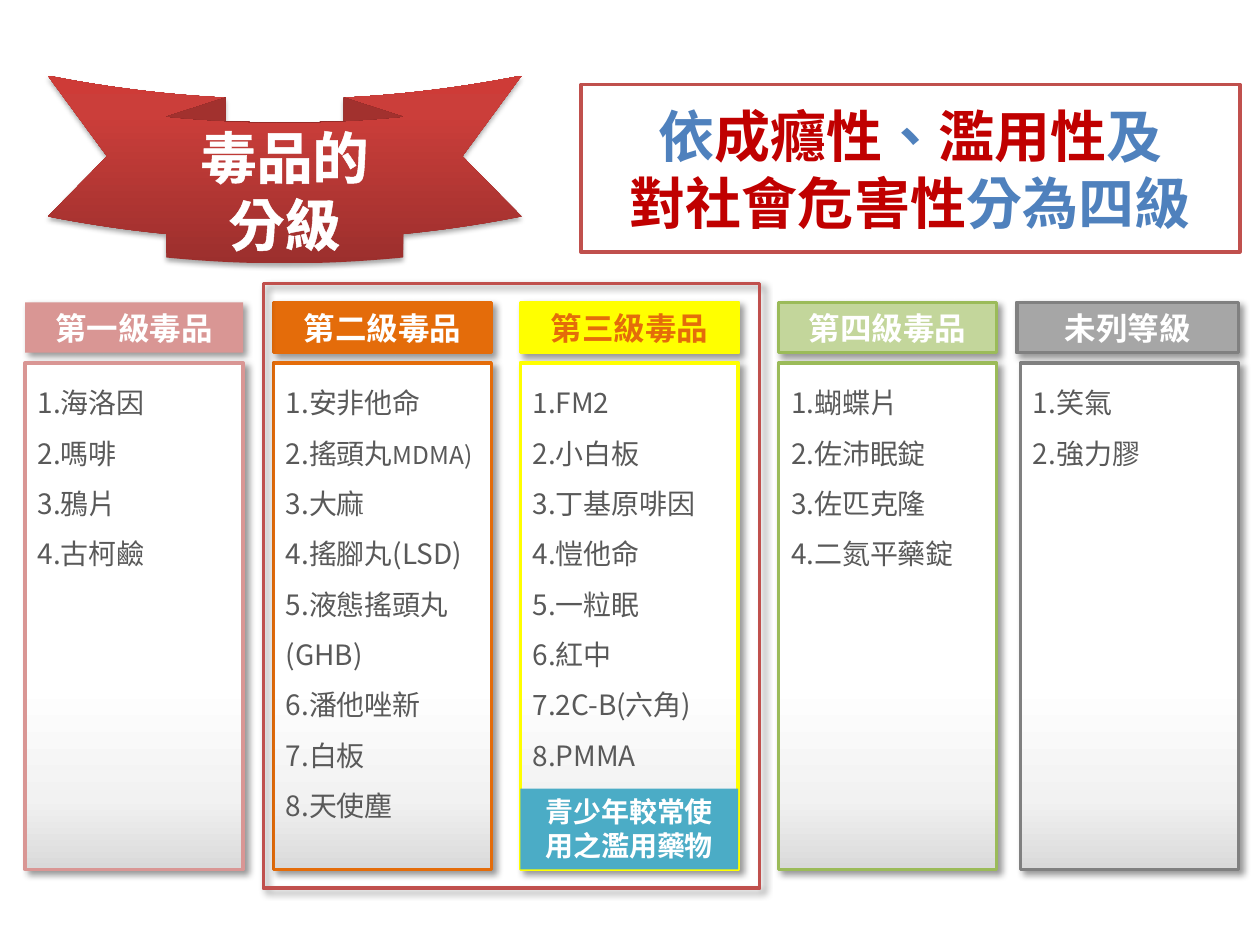
from lxml.etree import SubElement
from pptx import Presentation
from pptx.dml.color import RGBColor
from pptx.enum.shapes import MSO_SHAPE
from pptx.enum.text import MSO_ANCHOR, PP_ALIGN
from pptx.oxml.ns import qn
from pptx.util import Inches, Pt

WHITE = RGBColor(0xFF, 0xFF, 0xFF)
RED = RGBColor(0xC0, 0x50, 0x4D)
DARK_RED = RGBColor(0xC0, 0x00, 0x00)
BLUE = RGBColor(0x4F, 0x81, 0xBD)
TEAL = RGBColor(0x4B, 0xAC, 0xC6)
PINK = RGBColor(0xD9, 0x96, 0x94)
ORANGE = RGBColor(0xE4, 0x6C, 0x0A)
YELLOW = RGBColor(0xFF, 0xFF, 0x00)
GREEN = RGBColor(0x9B, 0xBB, 0x59)
LIGHT_GREEN = RGBColor(0xC3, 0xD6, 0x9B)
GRAY = RGBColor(0x80, 0x80, 0x80)
LIGHT_GRAY = RGBColor(0xA6, 0xA6, 0xA6)
TEXT_GRAY = RGBColor(0x59, 0x59, 0x59)
LIST_STOPS = [
    (63, WHITE),
    (86, RGBColor(0xF2, 0xF2, 0xF2)),
    (100, RGBColor(0xD9, 0xD9, 0xD9)),
]
RIBBON_STOPS = [
    (0, RGBColor(0x9C, 0x2F, 0x2D)),
    (80, RGBColor(0xCB, 0x3E, 0x3A)),
    (100, RGBColor(0xCE, 0x3B, 0x37)),
]
CJK_FONT = "Noto Sans CJK SC"


def add_box(kind, left, top, width, height, fill=None, line=None, shadow=None):
    box = page.shapes.add_shape(
        kind, Inches(left), Inches(top), Inches(width), Inches(height)
    )
    box.shadow.inherit = False
    if fill is None:
        box.fill.background()
    elif isinstance(fill, list):
        box.fill.gradient()
        stops = box.element.spPr.find(".//" + qn("a:gsLst"))
        stops.clear()
        for position, color in fill:
            stop = SubElement(stops, qn("a:gs"), pos=str(position * 1000))
            SubElement(stop, qn("a:srgbClr"), val=str(color))
    else:
        box.fill.solid()
        box.fill.fore_color.rgb = fill
    if line is None:
        box.line.fill.background()
    else:
        box.line.color.rgb = line
        box.line.width = Pt(2)
    if shadow:
        opacity, blur, distance, angle = shadow
        effects = box.element.spPr.find(qn("a:effectLst"))
        outer = SubElement(
            effects, qn("a:outerShdw"), blurRad=str(Pt(blur)), dist=str(Pt(distance)),
            dir=str(angle * 60000), algn="tl", rotWithShape="0",
        )
        color = SubElement(outer, qn("a:srgbClr"), val="000000")
        SubElement(color, qn("a:alpha"), val=str(opacity * 1000))
    return box


def write_text(box, text, size, color, font, bold, align, anchor, spacing=None):
    frame = box.text_frame
    frame.text = text
    frame.word_wrap = True
    frame.vertical_anchor = anchor
    for paragraph in frame.paragraphs:
        paragraph.alignment = align
        paragraph.line_spacing = spacing
        for span in paragraph.runs:
            span.font.name = font
            span.font.size = Pt(size)
            span.font.bold = bold
            span.font.color.rgb = color


deck = Presentation()
deck.slide_width = Inches(10)
deck.slide_height = Inches(7.5)
page = deck.slides.add_slide(deck.slide_layouts[5])

title = page.shapes.title
title.left, title.top = Inches(4.61), Inches(0.67)
title.width, title.height = Inches(5.23), Inches(1.33)
title.fill.solid()
title.fill.fore_color.rgb = WHITE
title.line.color.rgb = RED
title.line.width = Pt(2)
title.text_frame.vertical_anchor = MSO_ANCHOR.MIDDLE
heading = title.text_frame.paragraphs[0]
heading.alignment = PP_ALIGN.CENTER
for text, color in [
    ("依", BLUE), ("成癮性", DARK_RED), ("、", BLUE), ("濫用性", DARK_RED),
    ("及", BLUE), ("對社會危害性", DARK_RED), ("分為四級", BLUE),
]:
    span = heading.add_run()
    span.text = text
    span.font.name = "Calibri"
    span.font.size = Pt(32)
    span.font.bold = True
    span.font.color.rgb = color
    if text == "及":
        heading.add_line_break()

SOFT_SHADOW = (40, 4, 3, 45)
COLUMN_WIDTH = 1.73
columns = [
    (0.2, 0.2, "第一級毒品", PINK, None, PINK, WHITE,
     ["海洛因", "嗎啡", "鴉片", "古柯鹼"]),
    (2.17, 2.17, "第二級毒品", ORANGE, ORANGE, ORANGE, WHITE,
     ["安非他命", "搖頭丸MDMA)", "大麻", "搖腳丸(LSD)", "液態搖頭丸(GHB)",
      "潘他唑新", "白板", "天使塵"]),
    (4.13, 4.13, "第三級毒品", YELLOW, YELLOW, YELLOW, ORANGE,
     ["FM2", "小白板", "丁基原啡因", "愷他命", "一粒眠", "紅中", "2C-B(六角)", "PMMA"]),
    (6.18, 6.18, "第四級毒品", LIGHT_GREEN, GREEN, GREEN, WHITE,
     ["蝴蝶片", "佐沛眠錠", "佐匹克隆", "二氮平藥錠"]),
    (8.07, 8.1, "未列等級", LIGHT_GRAY, GRAY, GRAY, WHITE, ["笑氣", "強力膠"]),
]
for header_left, left, name, fill, header_line, line, color, drugs in columns:
    header_width = left + COLUMN_WIDTH - header_left
    header = add_box(MSO_SHAPE.RECTANGLE, header_left, 2.4, header_width, 0.4,
                     fill, header_line, SOFT_SHADOW)
    write_text(header, name, 18, color, CJK_FONT, True,
               PP_ALIGN.CENTER, MSO_ANCHOR.TOP)

    drug_list = add_box(MSO_SHAPE.RECTANGLE, left, 2.88, COLUMN_WIDTH, 4.02,
                        LIST_STOPS, line, SOFT_SHADOW)
    drug_list.fill.gradient_angle = 270
    numbered = "\n".join(f"{number}.{drug}" for number, drug in enumerate(drugs, 1))
    write_text(drug_list, numbered, 16, TEXT_GRAY, CJK_FONT, False,
               PP_ALIGN.LEFT, MSO_ANCHOR.TOP, 1.5)
    for paragraph in drug_list.text_frame.paragraphs:
        if paragraph.text.endswith("MDMA)"):
            first = paragraph.runs[0]
            first.text = first.text.removesuffix("MDMA)")
            span = paragraph.add_run()
            span.text = "MDMA)"
            span.font.name = CJK_FONT
            span.font.size = Pt(14)
            span.font.color.rgb = TEXT_GRAY

ribbon = add_box(MSO_SHAPE.CURVED_DOWN_RIBBON, 0.38, 0.6, 3.76, 1.49,
                 RIBBON_STOPS, None, (35, 3.1, 1.8, 90))
ribbon.fill.gradient_angle = 90
write_text(ribbon, "毒品的\n分級", 32, WHITE, CJK_FONT, True,
           PP_ALIGN.CENTER, MSO_ANCHOR.MIDDLE)
for properties in ribbon.element.iter(qn("a:rPr")):
    outline = SubElement(properties, qn("a:ln"), w=str(Pt(0.75)))
    outline_fill = SubElement(outline, qn("a:solidFill"))
    SubElement(outline_fill, qn("a:srgbClr"), val=str(WHITE))
    properties.insert(0, outline)

youth_note = add_box(MSO_SHAPE.RECTANGLE, 4.13, 6.26, COLUMN_WIDTH, 0.64, TEAL)
write_text(youth_note, "青少年較常使用之濫用藥物", 16, WHITE, "Calibri", True,
           PP_ALIGN.CENTER, MSO_ANCHOR.TOP)

add_box(MSO_SHAPE.RECTANGLE, 2.09, 2.25, 3.94, 4.8, None, RED, SOFT_SHADOW)

for properties in page.element.iter(qn("a:rPr")):
    properties.set("lang", "zh-TW")

deck.save("out.pptx")
